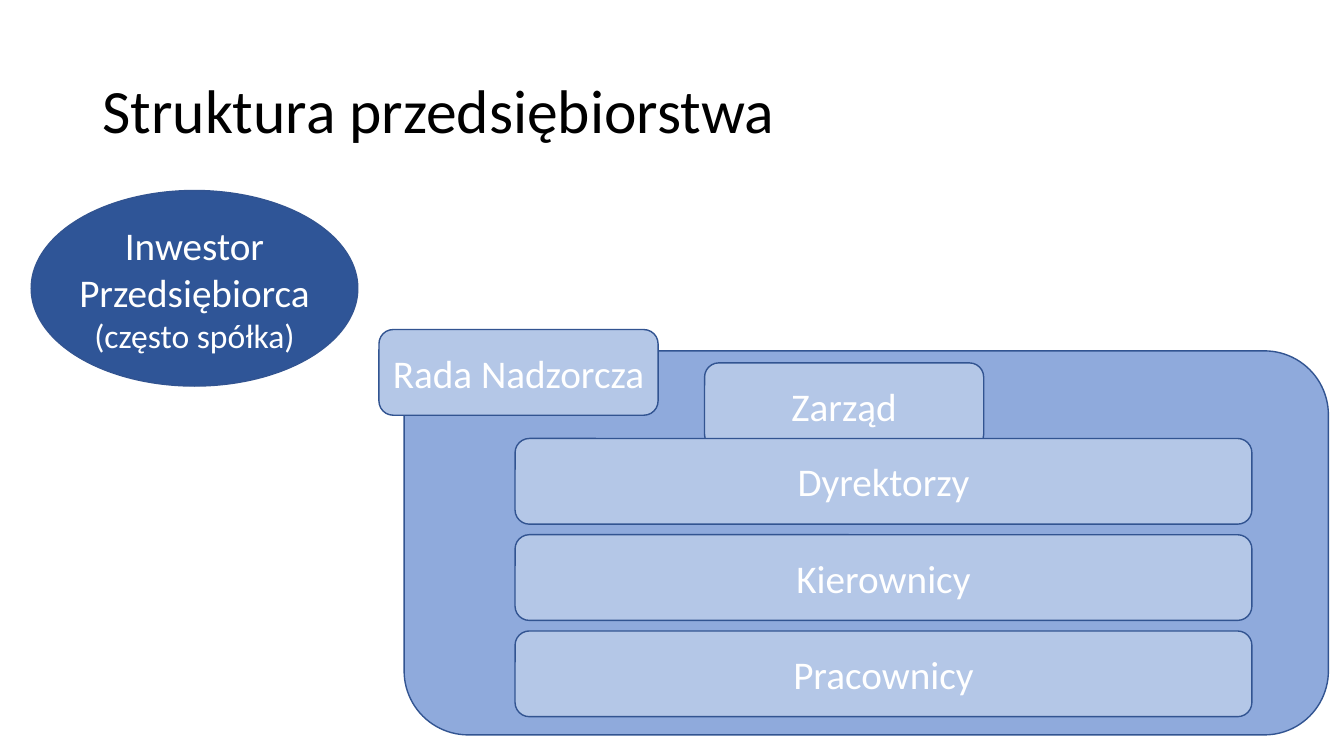
"""Build the slide on the structure of an enterprise."""
from pptx import Presentation
from pptx.dml.color import RGBColor
from pptx.enum import shapes, text
from pptx.util import Pt

BLACK = RGBColor(0, 0, 0)
WHITE = RGBColor(255, 255, 255)
NAVY = RGBColor(0x2F, 0x55, 0x97)
EDGE = RGBColor(0x32, 0x54, 0x91)
BLUE = RGBColor(0x8F, 0xAA, 0xDC)
PALE = RGBColor(0xB4, 0xC7, 0xE7)
ROUND = shapes.MSO_SHAPE.ROUNDED_RECTANGLE
OVAL = shapes.MSO_SHAPE.OVAL


def add_run(para, words, size, color=WHITE):
    run = para.add_run()
    run.text = words
    run.font.size = Pt(size)
    run.font.name = "Calibri"
    run.font.color.rgb = color


def add_box(kind, left, top, width, height, fill, label=""):
    box = slide.shapes.add_shape(kind, Pt(left), Pt(top), Pt(width), Pt(height))
    box.shadow.inherit = False
    box.fill.solid()
    box.fill.fore_color.rgb = fill
    box.line.color.rgb = EDGE
    box.line.width = Pt(1)
    frame = box.text_frame
    frame.word_wrap = True
    frame.vertical_anchor = text.MSO_ANCHOR.MIDDLE
    frame.margin_left = frame.margin_right = 0
    para = frame.paragraphs[0]
    para.alignment = text.PP_ALIGN.CENTER
    if label:
        add_run(para, label, 28)
    return frame


deck = Presentation()
deck.slide_width, deck.slide_height = Pt(960), Pt(540)
slide = deck.slides.add_slide(deck.slide_layouts[5])

title = slide.shapes.title
title.left, title.top = Pt(66), Pt(28.8)
title.width, title.height = Pt(828), Pt(104.4)
title.text_frame.vertical_anchor = text.MSO_ANCHOR.MIDDLE
head = title.text_frame.paragraphs[0]
head.alignment = text.PP_ALIGN.LEFT
head.line_spacing = 0.9
add_run(head, "Struktura przedsiębiorstwa", 44, BLACK)

add_box(ROUND, 288.7, 250.6, 660.2, 274.3, BLUE)

boards = [("Rada Nadzorcza", 270.7, 235.4), ("Zarząd", 503.3, 259.2)]
for name, left, top in boards:
    add_box(ROUND, left, top, 199.4, 61.2, PALE, name)

for row, name in enumerate(["Dyrektorzy", "Kierownicy", "Pracownicy"]):
    add_box(ROUND, 367.9, 313.2 + row * 68.75, 526.3, 61.2, PALE, name)

owner = add_box(OVAL, 22.3, 136.1, 233.3, 139.7, NAVY, "Inwestor")
para = owner.add_paragraph()
para.alignment = text.PP_ALIGN.CENTER
add_run(para, "Przedsiębiorca", 28)
para.add_line_break()
add_run(para, "(często spółka)", 24)

deck.save("out.pptx")
